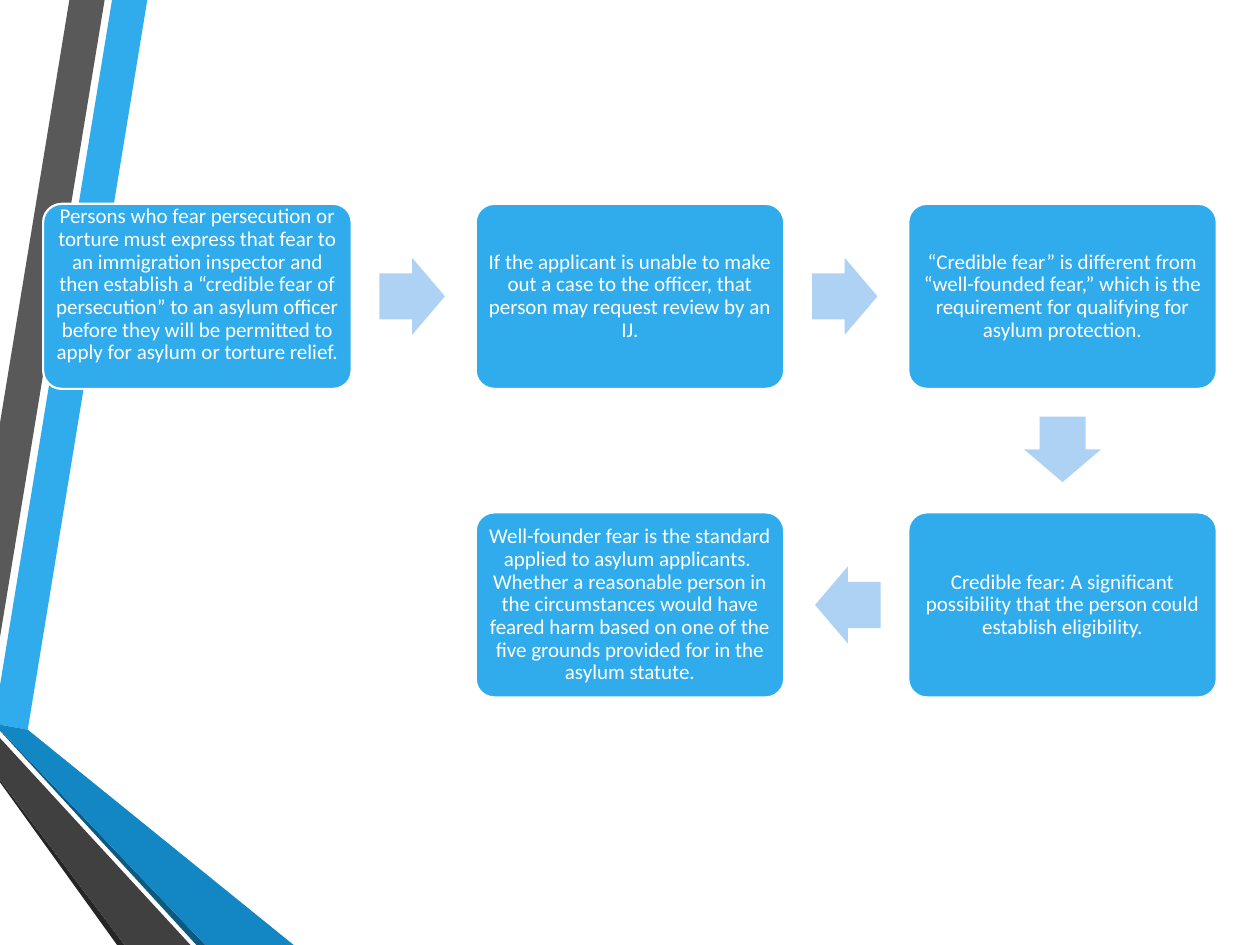
from dataclasses import dataclass

import pptx
import pptx.dml.color
import pptx.enum.shapes
import pptx.enum.text
import pptx.slide
import pptx.util
from pptx.util import Cm


@dataclass(frozen=True)
class Theme:
    accent: str = "30ACEC"
    accent_dark: str = "1287C3"
    accent_shade: str = "0C5A82"
    arrow: str = "AED2F4"
    gray: str = "595959"
    gray_dark: str = "404040"
    gray_shade: str = "262626"
    white: str = "FFFFFF"
    font: str = "Calibri"
    text_size: float = 12
    outline: float = 1.25


@dataclass(frozen=True)
class Ribbon:
    color: str
    points: tuple[tuple[float, float], ...]


@dataclass(frozen=True)
class Step:
    column: int
    row: int
    text: str
    bottom_inset: float = 0.12


THEME = Theme()
SLIDE_WIDTH, SLIDE_HEIGHT = 25.4, 19.05
GRID_LEFT, GRID_TOP = 0.87, 4.11
COLUMN_PITCH, ROW_PITCH = 8.72, 6.22
BOX_WIDTH, BOX_HEIGHT = 6.22, 3.73
ARROW_LENGTH, ARROW_BREADTH, ARROW_GAP = 1.32, 1.55, 0.56
INSET = 0.12

RIBBONS = (
    Ribbon(THEME.accent, ((0, 13.82), (0, 14.61), (0.56, 14.71), (2.97, 0), (2.26, 0))),
    Ribbon(THEME.gray, ((2.11, 0), (1.4, 0), (0, 8.53), (0, 12.85))),
    Ribbon(THEME.gray_shade, ((0, 15.72), (0, 15.77), (2.36, SLIDE_HEIGHT), (2.51, SLIDE_HEIGHT))),
    Ribbon(THEME.accent_shade, ((0, 14.71), (0, 14.73), (3.96, SLIDE_HEIGHT), (4.14, SLIDE_HEIGHT))),
    Ribbon(THEME.accent_dark, ((0, 14.71), (4.14, SLIDE_HEIGHT), (5.92, SLIDE_HEIGHT), (0.56, 14.71), (0, 14.61))),
    Ribbon(THEME.gray_dark, ((0, 15.72), (2.51, SLIDE_HEIGHT), (3.84, SLIDE_HEIGHT), (0, 14.88))),
)

STEPS = (
    Step(0, 0, "Persons who fear persecution or torture must express that fear to an immigration "
         "inspector and then establish a “credible fear of persecution” to an asylum officer "
         "before they will be permitted to apply for asylum or torture relief.", 0.57),
    Step(1, 0, "If the applicant is unable to make out a case to the officer, that person may "
         "request review by an IJ."),
    Step(2, 0, "“Credible fear” is different from “well-founded fear,” which is the requirement "
         "for qualifying for asylum protection."),
    Step(2, 1, "Credible fear: A significant possibility that the person could establish eligibility."),
    Step(1, 1, "Well-founder fear is the standard applied to asylum applicants.  Whether a "
         "reasonable person in the circumstances would have feared harm based on one of the "
         "five grounds provided for in the asylum statute."),
)


def rgb(color: str) -> pptx.dml.color.RGBColor:
    return pptx.dml.color.RGBColor.from_string(color)


def paint(shape, color: str) -> None:
    shape.shadow.inherit = False
    shape.fill.solid()
    shape.fill.fore_color.rgb = rgb(color)
    shape.line.fill.background()


def draw_ribbon(slide: pptx.slide.Slide, ribbon: Ribbon) -> None:
    points = [(Cm(x), Cm(y)) for x, y in ribbon.points]
    builder = slide.shapes.build_freeform(*points[0])
    builder.add_line_segments(points[1:], close=True)
    paint(builder.convert_to_shape(), ribbon.color)


def draw_step(slide: pptx.slide.Slide, step: Step) -> None:
    shape = slide.shapes.add_shape(
        pptx.enum.shapes.MSO_SHAPE.ROUNDED_RECTANGLE,
        Cm(GRID_LEFT + step.column * COLUMN_PITCH), Cm(GRID_TOP + step.row * ROW_PITCH),
        Cm(BOX_WIDTH), Cm(BOX_HEIGHT))
    shape.adjustments[0] = 0.1
    paint(shape, THEME.accent)
    shape.line.color.rgb = rgb(THEME.white)
    shape.line.width = pptx.util.Pt(THEME.outline)
    text_frame = shape.text_frame
    text_frame.text = step.text
    text_frame.word_wrap = True
    text_frame.vertical_anchor = pptx.enum.text.MSO_ANCHOR.MIDDLE
    text_frame.margin_left = text_frame.margin_right = text_frame.margin_top = Cm(INSET)
    text_frame.margin_bottom = Cm(step.bottom_inset)
    paragraph = text_frame.paragraphs[0]
    paragraph.alignment = pptx.enum.text.PP_ALIGN.CENTER
    paragraph.line_spacing = 0.9
    font = paragraph.runs[0].font
    font.name = THEME.font
    font.size = pptx.util.Pt(THEME.text_size)
    font.color.rgb = rgb(THEME.white)


def draw_arrow(slide: pptx.slide.Slide, source: Step, target: Step) -> None:
    across, down = target.column - source.column, target.row - source.row
    reach = ARROW_GAP + ARROW_LENGTH / 2
    center_x = GRID_LEFT + source.column * COLUMN_PITCH + BOX_WIDTH / 2 + across * (BOX_WIDTH / 2 + reach)
    center_y = GRID_TOP + source.row * ROW_PITCH + BOX_HEIGHT / 2 + down * (BOX_HEIGHT / 2 + reach)
    shape = slide.shapes.add_shape(
        pptx.enum.shapes.MSO_SHAPE.RIGHT_ARROW,
        Cm(center_x - ARROW_LENGTH / 2), Cm(center_y - ARROW_BREADTH / 2),
        Cm(ARROW_LENGTH), Cm(ARROW_BREADTH))
    shape.adjustments[0] = 0.6
    shape.adjustments[1] = 0.5
    shape.rotation = 90 if down else 180 if across < 0 else 0
    paint(shape, THEME.arrow)


def main() -> None:
    presentation = pptx.Presentation()
    presentation.slide_width = Cm(SLIDE_WIDTH)
    presentation.slide_height = Cm(SLIDE_HEIGHT)
    slide = presentation.slides.add_slide(presentation.slide_layouts[6])
    for ribbon in RIBBONS:
        draw_ribbon(slide, ribbon)
    for step in STEPS:
        draw_step(slide, step)
    for source, target in zip(STEPS, STEPS[1:]):
        draw_arrow(slide, source, target)
    presentation.save("out.pptx")


if __name__ == "__main__":
    main()
